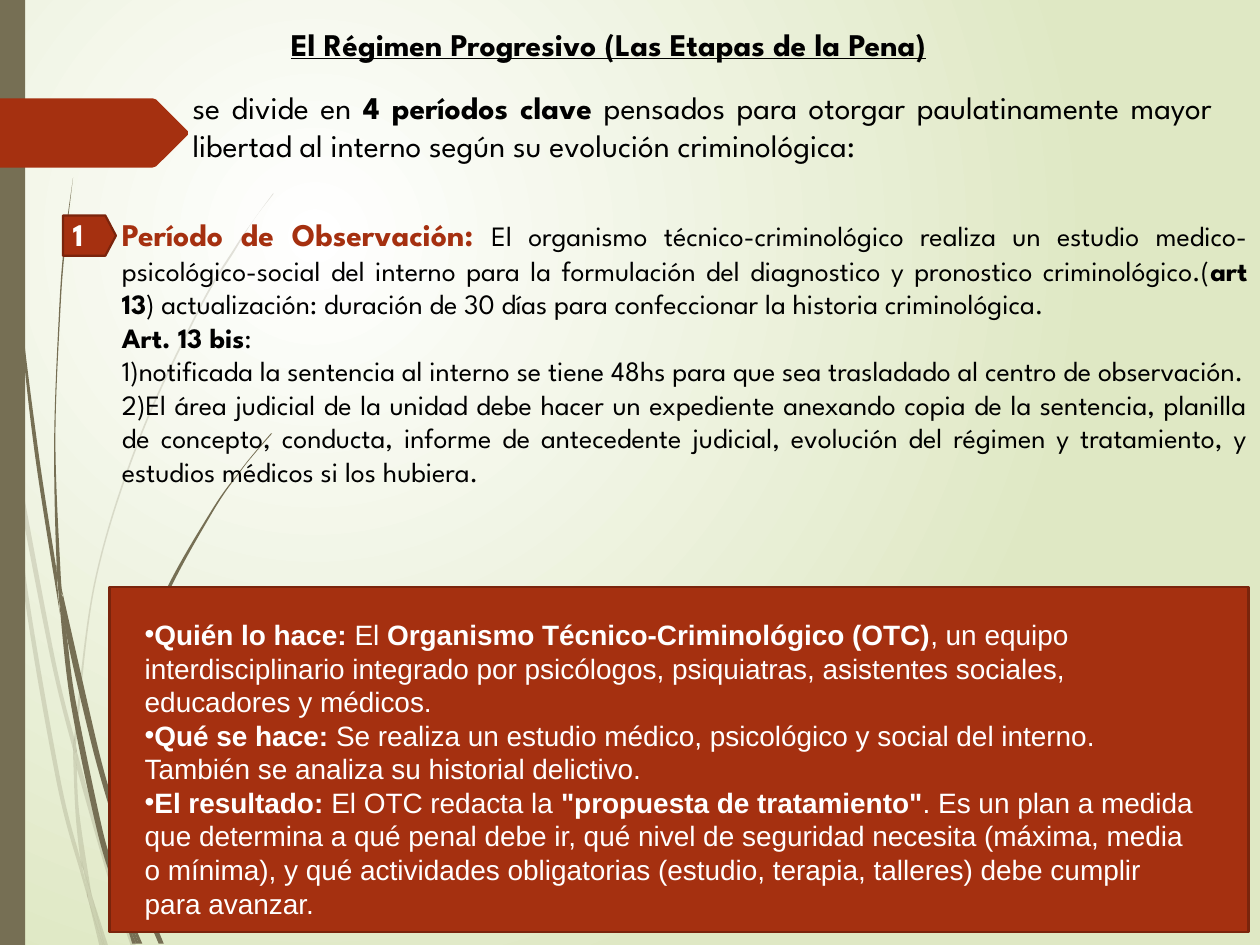
from lxml.etree import SubElement
from pptx import Presentation
from pptx.dml.color import RGBColor
from pptx.enum.shapes import MSO_SHAPE
from pptx.enum.text import MSO_ANCHOR, PP_ALIGN
from pptx.oxml.ns import qn
from pptx.util import Inches, Pt

COLORS = {"olive": "766F54", "rust": "A53010", "rust_edge": "7A240C",
          "black": "000000", "white": "FFFFFF", "sage": "DFE8C4"}
BOLD = {"bold": True}
HEADING = {"name": "League Spartan", "size": Pt(18)}
BODY = {"name": "League Spartan", "size": Pt(16)}
NOTE = {"name": "Arial", "size": Pt(16)}

PALE_BLADES = [
    ([(0.08, 3.5), (0.06, 3.22), (0, 2.82)], [(0, 2.99), (0.07, 3.44), (0.08, 3.5)]),
    ([(0.1, 3.45), (0.43, 5.2), (0.59, 5.86)],
     [(0.59, 5.99), (0.4, 5.22), (0.12, 3.76), (0.1, 3.45)]),
    ([(0.61, 5.96), (0.64, 6.07), (0.88, 6.92), (1.08, 7.51)],
     [(1.04, 7.51), (0.85, 6.94), (0.61, 6.1)]),
    ([(0.83, 7.51), (0.86, 7.51)], [(0.73, 7.11)]),
    ([(0.08, 3.5), (0.12, 3.76), (0.22, 4.69), (0.48, 6.19), (0.64, 6.83), (0.69, 7.07), (0.7, 7.14)],
     [(0.64, 6.93), (0.45, 6.21), (0.19, 4.7), (0.08, 3.5)]),
    ([(0.58, 5.99), (0.6, 6.46), (0.64, 6.83), (0.67, 6.92), (0.73, 7.11)],
     [(0.72, 7.06), (0.63, 6.46), (0.61, 6.1), (0.61, 6.08)]),
    ([(0.61, 5.96), (0.61, 5.84), (0.76, 4.62), (1.11, 3.49), (1.59, 2.45), (1.87, 1.98), (2.01, 1.75), (2.17, 1.54)],
     [(2.17, 1.53), (2.01, 1.75), (1.86, 1.97), (1.58, 2.44), (1.1, 3.48), (0.75, 4.61), (0.59, 5.84), (0.59, 5.86)]),
    ([(0.7, 7.14), (0.79, 7.51)], [(0.82, 7.51)]),
    ([(0.61, 6.1), (0.61, 5.96), (0.59, 5.86)], [(0.58, 5.99), (0.61, 6.08)]),
    ([(0.65, 6.83), (0.69, 7.07), (0.7, 7.14), (0.82, 7.51)],
     [(0.83, 7.51), (0.73, 7.11), (0.67, 6.92)]),
]
DARK_BLADES = [
    ([(0.02, 0), (0.03, 0.48), (0.05, 1.1), (0.14, 2.33), (0.27, 3.55), (0.46, 4.77), (0.47, 4.81)],
     [(0.45, 4.57), (0.45, 4.53), (0.3, 3.55), (0.15, 2.32), (0.06, 1.09), (0.04, 0.48), (0.03, 0)]),
    ([(0.5, 4.72), (0.53, 5.05), (0.73, 5.92), (0.88, 6.45)],
     [(0.88, 6.31), (0.77, 5.9), (0.5, 4.72)]),
    ([(0.91, 6.41), (0.94, 6.49), (1.13, 7.06), (1.3, 7.49)],
     [(1.26, 7.49), (1.09, 7.08), (0.91, 6.56)]),
    ([(0.47, 4.77), (0.53, 5.05), (0.6, 5.56), (0.81, 6.57), (0.91, 6.91), (0.96, 7.17), (0.97, 7.22)],
     [(0.92, 7.08), (0.77, 6.59), (0.56, 5.57), (0.47, 4.77)]),
    ([(0.5, 4.72), (0.48, 4.53), (0.44, 3.49), (0.48, 2.45), (0.52, 1.93), (0.58, 1.41)],
     [(0.58, 1.41), (0.51, 1.93), (0.47, 2.45), (0.43, 3.49), (0.45, 4.49), (0.49, 4.72)]),
    ([(1.1, 7.49), (1.13, 7.49)], [(1, 7.19)]),
    ([(0.47, 4.77), (0.53, 5.05)], [(0.5, 4.72), (0.49, 4.72), (0.45, 4.49), (0.45, 4.53)]),
    ([(0.91, 6.41), (0.91, 6.33), (1.03, 5.52), (1.31, 4.76), (1.69, 4.06), (1.91, 3.74), (2.03, 3.59), (2.16, 3.44)],
     [(2.15, 3.44), (2.03, 3.58), (1.91, 3.73), (1.68, 4.05), (1.29, 4.74), (1.01, 5.51), (0.88, 6.31)]),
    ([(0.97, 7.22), (1.05, 7.49)], [(1.08, 7.49)]),
    ([(0.88, 6.45), (0.91, 6.91), (0.96, 7.06), (1, 7.19)],
     [(1, 7.16), (0.91, 6.56), (0.9, 6.51), (0.88, 6.45)]),
    ([(0.88, 6.45), (0.9, 6.51), (0.91, 6.56)], [(0.91, 6.41), (0.88, 6.31)]),
    ([(0.91, 6.91), (0.96, 7.17), (0.97, 7.22), (1.08, 7.49)],
     [(1.1, 7.49), (1, 7.19), (0.96, 7.06)]),
]
ARROW = [(0, 0.78), (1.21, 0.78), (1.24, 0.79), (1.49, 1.04), (1.49, 1.07),
         (1.24, 1.32), (1.21, 1.33), (0, 1.33)]


def bezier_points(knots):
    padded = [knots[0], *knots, knots[-1]]
    points = []
    for a, b, c, d in zip(padded, padded[1:], padded[2:], padded[3:]):
        leaving = tuple(q + (r - p) / 6 for p, q, r in zip(a, b, c))
        arriving = tuple(r - (s - q) / 6 for q, r, s in zip(b, c, d))
        points += [leaving, arriving, c]
    return points


def rgb(color):
    return RGBColor.from_string(COLORS[color])


class SlideBuilder:
    def __init__(self, slide):
        self.slide = slide

    def background(self, center, edge):
        fill = self.slide.background.fill
        fill.gradient()
        for stop, color in zip(fill.gradient_stops, (center, edge)):
            stop.color.rgb = rgb(color)
        gradient = next(self.slide.element.iter(qn("a:gradFill")))
        gradient.remove(gradient.find(qn("a:lin")))
        radial = SubElement(gradient, qn("a:path"), path="circle")
        SubElement(radial, qn("a:fillToRect"), l="50000", t="50000", r="100000", b="100000")

    def paint(self, shape, color, edge=None):
        shape.shadow.inherit = False
        shape.fill.solid()
        shape.fill.fore_color.rgb = rgb(color)
        if edge:
            shape.line.color.rgb = rgb(edge)
            shape.line.width = Pt(1.25)
        else:
            shape.line.fill.background()

    def outline(self, points, color):
        (x, y), *rest = [(Inches(x), Inches(y)) for x, y in points]
        builder = self.slide.shapes.build_freeform(x, y)
        builder.add_line_segments(rest, close=True)
        shape = builder.convert_to_shape()
        self.paint(shape, color)
        return shape

    def blade(self, outward, back, color, alpha):
        tip = [outward[-1], back[0], back[0]]
        points = [outward[0], *bezier_points(outward), *tip, *bezier_points(back)]
        shape = self.outline(points, color)
        lines = list(shape.element.spPr.iter(qn("a:lnTo")))
        for first, second, third in zip(lines[::3], lines[1::3], lines[2::3]):
            first.tag = qn("a:cubicBezTo")
            for line in (second, third):
                first.append(line[0])
                line.getparent().remove(line)
        if alpha:
            tint = next(shape.element.spPr.iter(qn("a:srgbClr")))
            SubElement(tint, qn("a:alpha"), val=str(alpha * 1000))

    def preset(self, kind, box, color, edge=None, rotation=0):
        shape = self.slide.shapes.add_shape(kind, *map(Inches, box))
        shape.rotation = rotation
        self.paint(shape, color, edge)

    def text(self, box, paragraphs, style, color="black", bullet=None, **layout):
        frame = self.slide.shapes.add_textbox(*map(Inches, box)).text_frame
        frame.word_wrap = True
        frame.vertical_anchor = layout.get("anchor", MSO_ANCHOR.TOP)
        for index, runs in enumerate(paragraphs):
            paragraph = frame.add_paragraph() if index else frame.paragraphs[0]
            paragraph.alignment = layout.get("align", PP_ALIGN.LEFT)
            if bullet:
                properties = paragraph._p.get_or_add_pPr()
                SubElement(properties, qn("a:buFont"), typeface=style["name"])
                SubElement(properties, qn("a:buChar"), char=bullet)
            for words, changes in runs:
                run = paragraph.add_run()
                run.text = words
                values = {"color": color, **style, **changes}
                run.font.color.rgb = rgb(values.pop("color"))
                for name, value in values.items():
                    setattr(run.font, name, value)


def main():
    deck = Presentation()
    deck.slide_width, deck.slide_height = Inches(10), Inches(7.5)
    page = SlideBuilder(deck.slides.add_slide(deck.slide_layouts[6]))
    page.background("white", "sage")
    for blades, alpha in ((PALE_BLADES, 20), (DARK_BLADES, None)):
        for outward, back in blades:
            page.blade(outward, back, "olive", alpha)
    page.preset(MSO_SHAPE.RECTANGLE, (0, 0, 0.2, 7.5), "olive")
    page.outline(ARROW, "rust")

    page.text((2.21, 0.15, 6.15, 0.4),
              [[("El Régimen Progresivo (Las Etapas de la Pena)", {**BOLD, "underline": True})]], HEADING)
    page.text((1.43, 0.65, 8.29, 1.01), [[
        ("se divide en ", {}), ("4 períodos clave", BOLD),
        (" pensados para otorgar paulatinamente mayor libertad al interno según su evolución criminológica:", {}),
    ]], HEADING, align=PP_ALIGN.JUSTIFY)
    page.text((0.87, 1.66, 9.13, 3.43), [
        [("Período de Observación: ", {**HEADING, **BOLD, "color": "rust"}),
         ("El organismo técnico-criminológico realiza un estudio medico- psicológico-social del interno para la "
          "formulación del diagnostico y pronostico criminológico.(", {}),
         ("art 13", BOLD),
         (") actualización: duración de 30 días para confeccionar la historia criminológica.", {})],
        [("Art. 13 bis", BOLD), (":", {})],
        [("1)notificada la sentencia al interno se tiene 48hs para que sea trasladado al centro de observación.", {})],
        [("2)El área judicial de la unidad debe hacer un expediente anexando copia de la sentencia, planilla de "
          "concepto, conducta, informe de antecedente judicial, evolución del régimen y tratamiento, y estudios "
          "médicos si los hubiera.", {})],
    ], BODY, align=PP_ALIGN.JUSTIFY)

    page.preset(MSO_SHAPE.FLOWCHART_OFFPAGE_CONNECTOR, (0.55, 1.66, 0.32, 0.42), "rust", "rust_edge", 270)
    page.text((0.48, 1.66, 0.44, 0.4), [[("1", BOLD)]], HEADING, "white")

    page.preset(MSO_SHAPE.RECTANGLE, (0.87, 4.66, 9.04, 2.74), "rust", "rust_edge")
    page.text((1.05, 4.84, 8.58, 2.52), [
        [("Quién lo hace:", BOLD), (" El ", {}), ("Organismo Técnico-Criminológico (OTC)", BOLD),
         (", un equipo interdisciplinario integrado por psicólogos, psiquiatras, asistentes sociales, "
          "educadores y médicos.", {})],
        [("Qué se hace:", BOLD),
         (" Se realiza un estudio médico, psicológico y social del interno. También se analiza su "
          "historial delictivo.", {})],
        [("El resultado:", BOLD), (" El OTC redacta la ", {}), ('"propuesta de tratamiento"', BOLD),
         (". Es un plan a medida que determina a qué penal debe ir, qué nivel de seguridad necesita (máxima, "
          "media o mínima), y qué actividades obligatorias (estudio, terapia, talleres) debe cumplir para "
          "avanzar.", {})],
    ], NOTE, "white", "•", anchor=MSO_ANCHOR.MIDDLE)
    deck.save("out.pptx")


if __name__ == "__main__":
    main()
